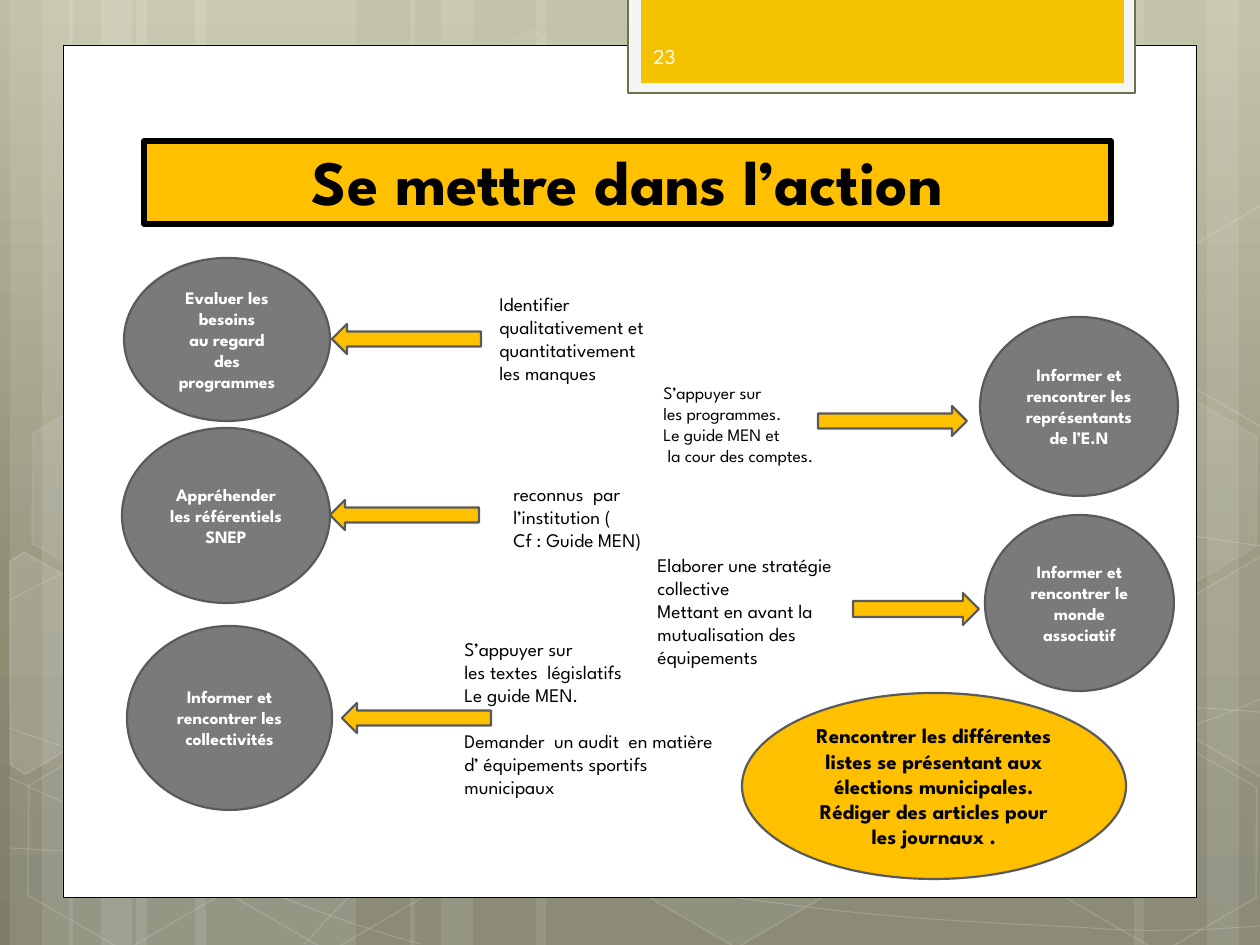
import copy
import math

import pptx
import pptx.dml.color
import pptx.enum.shapes
import pptx.enum.text
import pptx.oxml
import pptx.oxml.ns
import pptx.util

RGBColor = pptx.dml.color.RGBColor
PRESET = pptx.enum.shapes.MSO_SHAPE
ALIGN = pptx.enum.text.PP_ALIGN
ANCHOR = pptx.enum.text.MSO_ANCHOR
PX = 914400 / 126

WHITE = RGBColor(0xFF, 0xFF, 0xFF)
BLACK = RGBColor(0x00, 0x00, 0x00)
AMBER = RGBColor(0xFF, 0xC0, 0x00)
GOLD = RGBColor(0xF5, 0xC2, 0x01)
GREY = RGBColor(0x7A, 0x7A, 0x7A)
OUTLINE = RGBColor(0x5A, 0x5A, 0x5A)
TAB = RGBColor(0xF5, 0xF5, 0xF5)
TAB_LINE = RGBColor(0x6F, 0x6F, 0x4E)
NUMBER = RGBColor(0xFE, 0xFE, 0xFE)
BACKDROP = [(0, RGBColor(0xBE, 0xBE, 0xA2)), (0.62, RGBColor(0x8F, 0x8F, 0x76)),
            (1, RGBColor(0x7E, 0x7E, 0x69))]

BARS = [(136, 220), (10, 63), (42, 105), (195, 220), (69, 63), (101, 105),
        (924, 220), (1207, 63), (1134, 105), (536, 388), (410, 63), (441, 105)]
CURVES = [
    [(9, 848), (77, 852), (145, 856), (239, 854), (334, 853), (451, 851), (577, 838),
     (703, 825), (882, 801), (998, 777), (1113, 753), (1231, 717), (1269, 694)],
    [(9, 601), (45, 581), (82, 562), (152, 543), (224, 524), (326, 499), (437, 488),
     (549, 479), (685, 478), (824, 488), (963, 498), (1193, 537), (1269, 547)],
    [(8, 777), (160, 847), (311, 916), (421, 944)],
    [(9, 728), (48, 742), (88, 756), (161, 776), (234, 795), (344, 827), (450, 848),
     (554, 869), (687, 892), (791, 905), (896, 919), (1008, 924), (1075, 927),
     (1140, 932), (1158, 930), (1191, 930), (1223, 929), (1246, 927), (1269, 925)],
    [(305, 944), (328, 918), (350, 893), (381, 871), (411, 848), (454, 823), (489, 805),
     (524, 788), (546, 780), (592, 767), (638, 754), (722, 737), (766, 728),
     (811, 719), (818, 719), (857, 717), (896, 713), (958, 709), (1000, 708),
     (1045, 707), (1116, 708), (1116, 708), (1116, 708), (1201, 708), (1201, 708),
     (1223, 709), (1245, 711), (1256, 712), (1268, 713), (1264, 712), (1268, 713)],
]
HEXAGONS = [(421, 45, 4, 8), (626, 742, 6, 12), (14, 745, 0, 12), (18, 393, 7, 8),
            (219, 746, 0, 12), (949, 571, 10, 12), (1051, 747, 0, 12), (1051, 396, 7, 8)]
CUT_HEXAGONS = [
    ((45, 674), [(10, 561), (24, 552), (121, 607), (120, 718), (25, 774), (10, 765)], 10),
    ((1241, 655), [(1167, 611), (1261, 556), (1271, 562), (1271, 772), (1263, 777),
                   (1167, 722)], 4),
    ((1241, 304), [(1167, 261), (1261, 205), (1273, 212), (1271, 422), (1263, 427),
                   (1167, 372)], 0),
]
STEPS = [
    ((124, 258, 206, 163), ["Evaluer les besoins", "au regard", "des programmes"]),
    ((122, 428, 208, 175), ["Appréhender les référentiels", "SNEP"]),
    ((127, 626, 205, 184), ["Informer et rencontrer les collectivités"]),
    ((980, 317, 198, 179), ["Informer et rencontrer les représentants de l’E.N"]),
    ((985, 515, 189, 176), ["Informer et rencontrer le monde associatif"]),
]
ARROWS = [(PRESET.LEFT_ARROW, (332, 324, 149, 30)), (PRESET.LEFT_ARROW, (330, 500, 149, 30)),
          (PRESET.LEFT_ARROW, (342, 703, 149, 30)), (PRESET.RIGHT_ARROW, (818, 406, 149, 30)),
          (PRESET.RIGHT_ARROW, (853, 593, 126, 32))]
NOTES = [
    ((487, 286, 213, 106), 11, ["Identifier qualitativement et quantitativement", "les manques"]),
    ((501, 476, 213, 83), 11, ["reconnus  par l’institution (", "Cf : Guide MEN)"]),
    ((651, 376, 185, 140), 10, ["S’appuyer sur", "les programmes.", "Le guide MEN et",
                                " la cour des comptes."]),
    ((645, 547, 208, 130), 11, ["Elaborer une stratégie collective",
                                "Mettant en avant la mutualisation des équipements"]),
]
MEANS = ["S’appuyer sur", "les textes  législatifs", "Le guide MEN.",
         "Demander  un audit  en matière d’ équipements sportifs municipaux"]
CALL = ["Rencontrer les différentes listes se présentant aux élections municipales.",
        "Rédiger des articles pour les journaux ."]


def emu(*lengths):
    """Turn pixel lengths into EMU."""
    return [pptx.util.Emu(round(length * PX)) for length in lengths]


def paint(shape, fill=None, line=None, width=1.25, fill_alpha=100, line_alpha=100):
    """Give a shape its fill and outline, without a shadow."""
    shape.shadow.inherit = False
    for part, color in ((shape.fill, fill), (shape.line.fill, line)):
        if color is None:
            part.background()
        else:
            part.solid()
            part.fore_color.rgb = color
    if line is not None:
        shape.line.width = pptx.util.Pt(width)
    for place, percent in (("./", fill_alpha), ("./a:ln/", line_alpha)):
        if percent < 100:
            for color in shape._element.spPr.xpath(place + "a:solidFill/a:srgbClr"):
                color.append(pptx.oxml.parse_xml(
                    f'<a:alpha {pptx.oxml.ns.nsdecls("a")} val="{percent * 1000}"/>'))


def add_preset(slide, preset, box, **style):
    """Add a painted preset shape."""
    shape = slide.shapes.add_shape(preset, *emu(*box))
    paint(shape, **style)
    return shape


def add_outline(slide, points, closed, **style):
    """Add a painted freeform through the points."""
    builder = slide.shapes.build_freeform(*points[0], scale=PX)
    builder.add_line_segments(points[1:], close=closed)
    shape = builder.convert_to_shape()
    paint(shape, **style)
    return shape


def add_curve(slide, points, **style):
    """Add a chain of cubic curves, three points to each."""
    shape = add_outline(slide, points, False, **style)
    segments = shape._element.spPr.xpath(".//a:lnTo")
    for start in range(0, len(segments), 3):
        curve = pptx.oxml.parse_xml(f'<a:cubicBezTo {pptx.oxml.ns.nsdecls("a")}/>')
        segments[start].addprevious(curve)
        for segment in segments[start:start + 3]:
            curve.append(segment[0])
            segment.getparent().remove(segment)


def turn(points, center, degrees):
    """Rotate points around a centre."""
    cosine, sine = math.cos(math.radians(degrees)), math.sin(math.radians(degrees))
    x, y = center
    return [(round(x + (a - x) * cosine - (b - y) * sine),
             round(y + (a - x) * sine + (b - y) * cosine)) for a, b in points]


def write(shape, lines, size, color=BLACK, bold=False, align=ALIGN.LEFT, anchor=ANCHOR.TOP):
    """Fill a shape with formatted paragraphs."""
    frame = shape.text_frame
    frame.word_wrap = True
    frame.auto_size = pptx.enum.text.MSO_AUTO_SIZE.NONE
    frame.vertical_anchor = anchor
    frame.text = "\n".join(lines)
    values = {"name": "League Spartan", "size": pptx.util.Pt(size), "bold": bold}
    for paragraph in frame.paragraphs:
        paragraph.alignment = align
        for run in paragraph.runs:
            for name, value in values.items():
                setattr(run.font, name, value)
            run.font.color.rgb = color


def add_text(slide, box, lines, size, **style):
    """Add a wrapping text box."""
    shape = slide.shapes.add_textbox(*emu(*box))
    write(shape, lines, size, **style)
    return shape


def add_ellipse(slide, box, lines, size, fill, color):
    """Add an ellipse with centred bold text."""
    shape = add_preset(slide, PRESET.OVAL, box, fill=fill, line=OUTLINE)
    write(shape, lines, size, color, True, ALIGN.CENTER, ANCHOR.MIDDLE)


def set_backdrop(slide):
    """Give the slide its vertical gradient."""
    fill = slide.background.fill
    fill.gradient()
    fill.gradient_angle = 270
    first = fill.gradient_stops[0]._gs
    first.addnext(copy.deepcopy(first))
    for stop, (position, color) in zip(fill.gradient_stops, BACKDROP):
        stop.position = position
        stop.color.rgb = color


def add_decoration(slide):
    """Add the bars, curves, hexagons, panel and tab to the slide master."""
    for left, width in BARS:
        add_preset(slide, PRESET.RECTANGLE, (left, 0, width, 945), fill=WHITE, fill_alpha=10)
    for points in CURVES:
        add_curve(slide, points, line=WHITE, width=0.5, line_alpha=20)
    for left, top, fill_alpha, line_alpha in HEXAGONS:
        hexagon = add_preset(slide, PRESET.HEXAGON, (left, top, 220, 191),
                             fill=WHITE if fill_alpha else None, fill_alpha=fill_alpha,
                             line=WHITE, width=1, line_alpha=line_alpha)
        hexagon.adjustments[0] = 0.285
        hexagon.rotation = 30
    for center, points, fill_alpha in CUT_HEXAGONS:
        hexagon = add_outline(slide, turn(points, center, -30), True, line=WHITE, width=1,
                              fill=WHITE if fill_alpha else None, fill_alpha=fill_alpha,
                              line_alpha=12)
        hexagon.rotation = 30
    add_preset(slide, PRESET.RECTANGLE, (63, 45, 1134, 853), fill=WHITE, line=BLACK, width=0.5)
    add_preset(slide, PRESET.RECTANGLE, (628, -3, 507, 96), fill=TAB, line=TAB_LINE)
    add_preset(slide, PRESET.RECTANGLE, (641, -3, 483, 86), fill=GOLD)
    master_tree = slide.slide_layout.slide_master.shapes._spTree
    for number, shape in enumerate(list(slide.shapes)[1:], 100):
        shape._element.nvSpPr.cNvPr.id = number
        master_tree.append(shape._element)


def add_title(slide):
    """Format the title placeholder."""
    title = slide.shapes.title
    title.left, title.top, title.width, title.height = emu(144, 141, 967, 83)
    paint(title, fill=AMBER, line=BLACK, width=3)
    write(title, ["Se mettre dans l’action"], 36, BLACK, True, ALIGN.CENTER, ANCHOR.BOTTOM)


def main():
    """Build and save the slide."""
    presentation = pptx.Presentation()
    presentation.slide_width, presentation.slide_height = emu(1260, 945)
    slide = presentation.slides.add_slide(presentation.slide_layouts[5])
    set_backdrop(slide)
    add_decoration(slide)
    add_title(slide)
    add_text(slide, (641, 31, 184, 50), ["23"], 12, color=NUMBER, anchor=ANCHOR.MIDDLE)
    for box, lines in STEPS:
        add_ellipse(slide, box, lines, 10, GREY, WHITE)
    for preset, box in ARROWS:
        add_preset(slide, preset, box, fill=AMBER, line=OUTLINE)
    for box, size, lines in NOTES:
        add_text(slide, box, lines, size)
    means = add_text(slide, (452, 631, 277, 176), MEANS, 11)
    means.text_frame.paragraphs[-1].space_before = pptx.util.Pt(13)
    add_ellipse(slide, (742, 693, 384, 186), CALL, 12, AMBER, BLACK)
    presentation.save("out.pptx")


if __name__ == "__main__":
    main()
